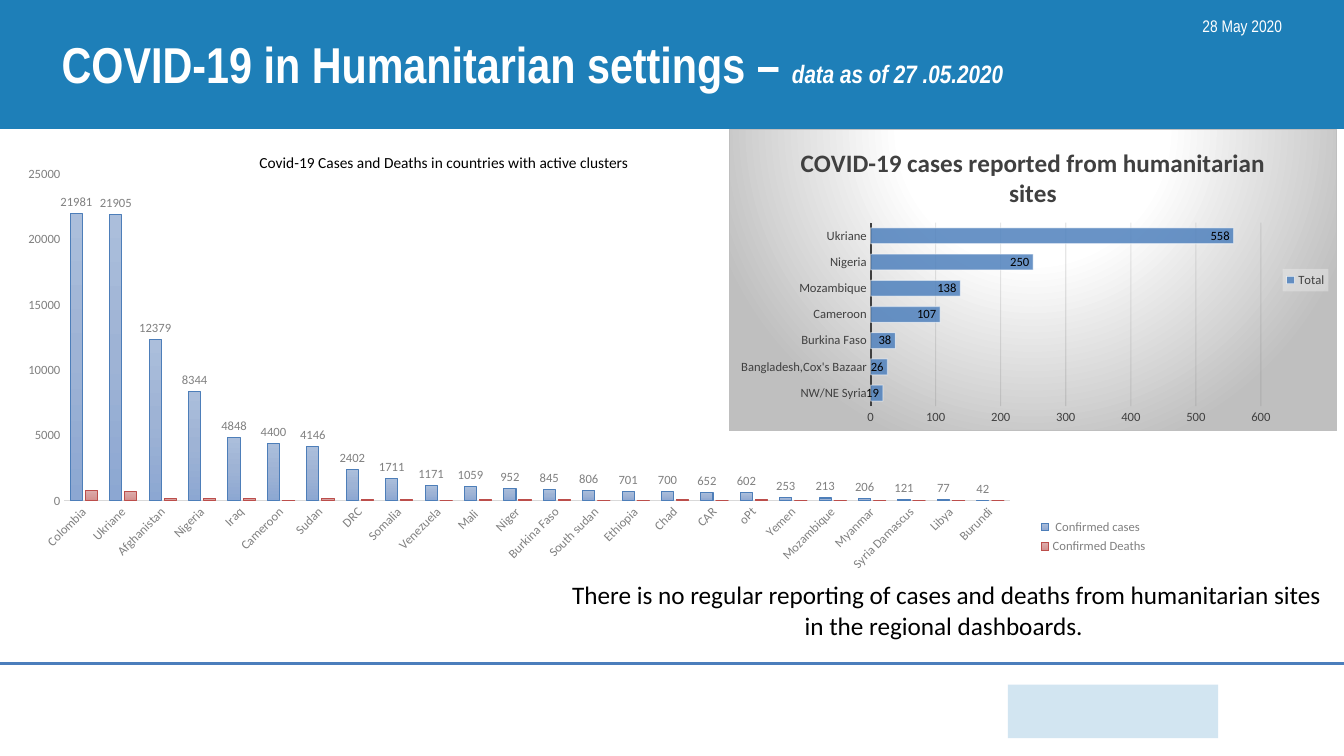
from lxml import etree
from pptx import Presentation
from pptx.chart import data as chart_data
from pptx.dml import color
from pptx.enum import chart as ch, shapes, text
from pptx.oxml import ns, parse_xml
from pptx.util import Cm, Pt

# ---- Content ----
HEADING = [("COVID-19 in Humanitarian settings – ", "heading", False),
           ("data as of 27 .05.2020", "subheading", True)]
DATE = "28 May 2020"
STATEMENT = ("There is no regular reporting of cases and deaths from humanitarian "
             "sites in the regional dashboards. ")
CLUSTER_TITLE = "Covid-19 Cases and Deaths in countries with active clusters"
SITE_TITLE = "COVID-19 cases reported from humanitarian sites"
SITES = [("NW/NE Syria", 19), ("Bangladesh,Cox's Bazaar", 26), ("Burkina Faso", 38),
         ("Cameroon", 107), ("Mozambique", 138), ("Nigeria", 250), ("Ukriane", 558)]
CLUSTERS = [  # country, confirmed cases, confirmed deaths
    ("Colombia", 21981, 800), ("Ukriane", 21905, 700), ("Afghanistan", 12379, 200),
    ("Nigeria", 8344, 200), ("Iraq", 4848, 200), ("Cameroon", 4400, 0),
    ("Sudan", 4146, 200), ("DRC", 2402, 100), ("Somalia", 1711, 100),
    ("Venezuela", 1171, 0), ("Mali ", 1059, 100), ("Niger", 952, 100),
    ("Burkina Faso", 845, 100), ("South sudan", 806, 0), ("Ethiopia", 701, 0),
    ("Chad", 700, 100), ("CAR", 652, 0), ("oPt", 602, 100), ("Yemen", 253, 0),
    ("Mozambique", 213, 0), ("Myanmar", 206, 0), ("Syria Damascus", 121, 0),
    ("Libya", 77, 0), ("Burundi", 42, 0)]

THEME = {
    "display": "Arial Narrow", "body": "Calibri",
    "white": "FFFFFF", "black": "000000", "header": "1E7FB8", "rule": "4B7EBC",
    "emblem": "D2E5F1", "dark": "404040", "grey": "808080", "axis": "D9D9D9",
    "grid": "0D0D0D", "border": "BFBFBF", "legend": "F2F2F2", "sites": "4F81BD",
    "site_panel": [(0, "FFFFFF"), (39, "FFFFFF"), (100, "BFBFBF")],
    "cases": ([(0, "ABBEDB"), (50, "9EB3D5"), (100, "8CA7D2")], "4D7EB9"),
    "deaths": ([(0, "DDACAB"), (50, "D79E9D"), (100, "D48D8B")], "BC4E4B"),
    "heading": 36, "subheading": 18, "statement": 18, "site_title": 18,
    "date": 12, "caption": 11, "chart": 10, "label": 9,
}
LINEAR = '<a:lin ang="5400000" scaled="0"/>'
RADIAL = ('<a:path path="circle"><a:fillToRect l="50000" t="-80000" r="50000" '
          'b="180000"/></a:path>')


# ---- Helpers ----
def rgb(name):
    return color.RGBColor.from_string(THEME.get(name, name))


def style(font, size, ink, face="body", bold=False, italic=False):
    font.size, font.name, font.bold, font.italic = Pt(THEME[size]), THEME[face], bold, italic
    font.color.rgb = rgb(ink)


def draw_line(line, ink, width):
    line.color.rgb, line.width = rgb(ink), Pt(width)


def set_alpha(parent, percent):
    tone = parent.xpath(".//a:srgbClr")[0]
    etree.SubElement(tone, ns.qn("a:alpha")).set("val", str(percent * 1000))


def gradient(stops, direction):
    marks = "".join(f'<a:gs pos="{at * 1000}"><a:srgbClr val="{tone}"/></a:gs>'
                    for at, tone in stops)
    return parse_xml(f'<a:gradFill {ns.nsdecls("a")} rotWithShape="1">'
                     f'<a:gsLst>{marks}</a:gsLst>{direction}</a:gradFill>')


def chart_properties(content=""):
    return parse_xml(f'<c:spPr {ns.nsdecls("c", "a")}>{content}</c:spPr>')


def place(part, index, inner=False, **fractions):
    for old in part.xpath("c:layout"):
        part.remove(old)
    target = '<c:layoutTarget val="inner"/>' if inner else ""
    modes = "".join(f'<c:{k}Mode val="edge"/>' for k in fractions if k in "xy")
    values = "".join(f'<c:{k} val="{v}"/>' for k, v in fractions.items())
    part.insert(index, parse_xml(
        f'<c:layout {ns.nsdecls("c")}><c:manualLayout>{target}{modes}{values}'
        '</c:manualLayout></c:layout>'))


def write(frame, runs, align, face="body", ink="black"):
    frame.word_wrap = True
    frame.vertical_anchor = text.MSO_ANCHOR.MIDDLE
    paragraph = frame.paragraphs[0]
    paragraph.alignment = align
    for words, size, bold, italic in runs:
        run = paragraph.add_run()
        run.text = words
        style(run.font, size, ink, face, bold, italic)


def add_block(fill, *box):
    block = slide.shapes.add_shape(shapes.MSO_SHAPE.RECTANGLE, *map(Cm, box))
    block.shadow.inherit = False
    block.fill.solid()
    block.fill.fore_color.rgb = rgb(fill)
    block.line.fill.background()
    return block


def add_bars(kind, rows, names, box, ink, gap):
    data = chart_data.CategoryChartData()
    labels, *columns = zip(*rows)
    data.categories = labels
    for name, values in zip(names, columns):
        data.add_series(name, values)
    chart = slide.shapes.add_chart(kind, *map(Cm, box), data).chart
    style(chart.font, "chart", "black")
    for axis in (chart.category_axis, chart.value_axis):
        axis.major_tick_mark = axis.minor_tick_mark = ch.XL_TICK_MARK.NONE
        style(axis.tick_labels.font, "label", ink)
    chart.value_axis.minimum_scale = 0
    chart.value_axis.format.line.fill.background()
    chart.has_legend = True
    chart.legend.position = ch.XL_LEGEND_POSITION.RIGHT
    chart.legend.include_in_layout = False
    style(chart.legend.font, "label", ink)
    plot = chart.plots[0]
    plot.vary_by_categories, plot.gap_width = False, gap
    return chart


def label_values(series, ink, position):
    labels = series.data_labels
    labels.show_value, labels.position = True, position
    style(labels.font, "label", ink)


prs = Presentation()
prs.slide_width, prs.slide_height = Cm(33.87), Cm(19.05)
slide = prs.slides.add_slide(prs.slide_layouts[5])

# ---- Header, footer rule and emblem space ----
header = add_block("header", 0, 0, 33.87, 3.25)
slide.shapes._spTree.insert(2, header._element)
heading = slide.shapes.title
heading.left, heading.top, heading.width, heading.height = map(Cm, (1.3, 0.33, 30.48, 2.54))
write(heading.text_frame, [(words, size, True, italic) for words, size, italic in HEADING],
      text.PP_ALIGN.LEFT, "display", "white")
date = slide.shapes.add_textbox(*map(Cm, (24.66, 0.13, 7.9, 1.02)))
write(date.text_frame, [(DATE, "date", False, False)], text.PP_ALIGN.RIGHT, "display", "white")
rule = slide.shapes.add_connector(shapes.MSO_CONNECTOR.STRAIGHT,
                                  *map(Cm, (0, 16.71, 33.87, 16.71)))
draw_line(rule.line, "rule", 2)
etree.SubElement(rule._element.spPr, ns.qn("a:effectLst"))
add_block("emblem", 25.4, 17.25, 5.3, 1.35)

# ---- Statement ----
statement = add_block("white", 14, 14.1, 19.71, 2.54)
write(statement.text_frame, [(STATEMENT, "statement", False, False)], text.PP_ALIGN.CENTER)

# ---- Cases by humanitarian site ----
sites = add_bars(ch.XL_CHART_TYPE.BAR_CLUSTERED, SITES, ["Total"],
                 (18.36, 3.25, 15.34, 7.62), "dark", 65)
sites.has_title = True
site_title = sites.chart_title.text_frame.paragraphs[0].add_run()
site_title.text = SITE_TITLE
style(site_title.font, "site_title", "dark", bold=True)
draw_line(sites.category_axis.format.line, "dark", 1.5)
sites.value_axis.major_unit = 100
gridlines = sites.value_axis.major_gridlines
draw_line(gridlines.format.line, "grid", 0.75)
set_alpha(sites.value_axis._element.xpath("c:majorGridlines")[0], 10)
total = sites.plots[0].series[0]
total.format.fill.solid()
total.format.fill.fore_color.rgb = rgb("sites")
draw_line(total.format.line, "white", 0.75)
set_alpha(total._element.xpath("c:spPr")[0], 85)
set_alpha(total._element.xpath("c:spPr/a:ln")[0], 50)
label_values(total, "black", ch.XL_LABEL_POSITION.INSIDE_END)
legend_back = chart_properties(f'<a:solidFill><a:srgbClr val="{THEME["legend"]}"/></a:solidFill>')
set_alpha(legend_back, 39)
sites.legend._element.xpath("c:overlay")[0].addnext(legend_back)
panel = chart_properties(f'<a:ln w="9525"><a:solidFill><a:srgbClr val="{THEME["border"]}"/>'
                         '</a:solidFill></a:ln>')
panel.insert(0, gradient(THEME["site_panel"], RADIAL))
sites.element.xpath("c:chart")[0].addnext(panel)

# ---- Cases and deaths by country ----
clusters = add_bars(ch.XL_CHART_TYPE.COLUMN_CLUSTERED, CLUSTERS,
                    [" Confirmed cases", "Confirmed Deaths "],
                    (-0.91, 3.66, 30.48, 12.57), "grey", 100)
clusters.has_title = False
clusters.plots[0].overlap = -24
clusters.value_axis.has_major_gridlines = False
clusters.value_axis.maximum_scale, clusters.value_axis.major_unit = 25000, 5000
draw_line(clusters.category_axis.format.line, "axis", 0.75)
clusters.category_axis._element.xpath("c:txPr/a:bodyPr")[0].set("rot", "-2700000")
for series, key in zip(clusters.plots[0].series, ("cases", "deaths")):
    stops, outline = THEME[key]
    draw_line(series.format.line, outline, 0.75)
    series._element.xpath("c:spPr")[0].insert(0, gradient(stops, LINEAR))
label_values(clusters.plots[0].series[0], "grey", ch.XL_LABEL_POSITION.OUTSIDE_END)
place(clusters.element.xpath("c:chart/c:plotArea")[0], 0, inner=True,
      x=0.083, y=0.058, w=0.782, h=0.655)
place(clusters.legend._element, 1, x=0.88, y=0.74, w=0.11, h=0.09)
clusters.element.xpath("c:chart")[0].addnext(chart_properties("<a:noFill/><a:ln><a:noFill/></a:ln>"))

caption = add_block("white", 4.32, 3.66, 13.74, 0.86)
write(caption.text_frame, [(CLUSTER_TITLE, "caption", False, False)], text.PP_ALIGN.CENTER)

prs.save("out.pptx")
